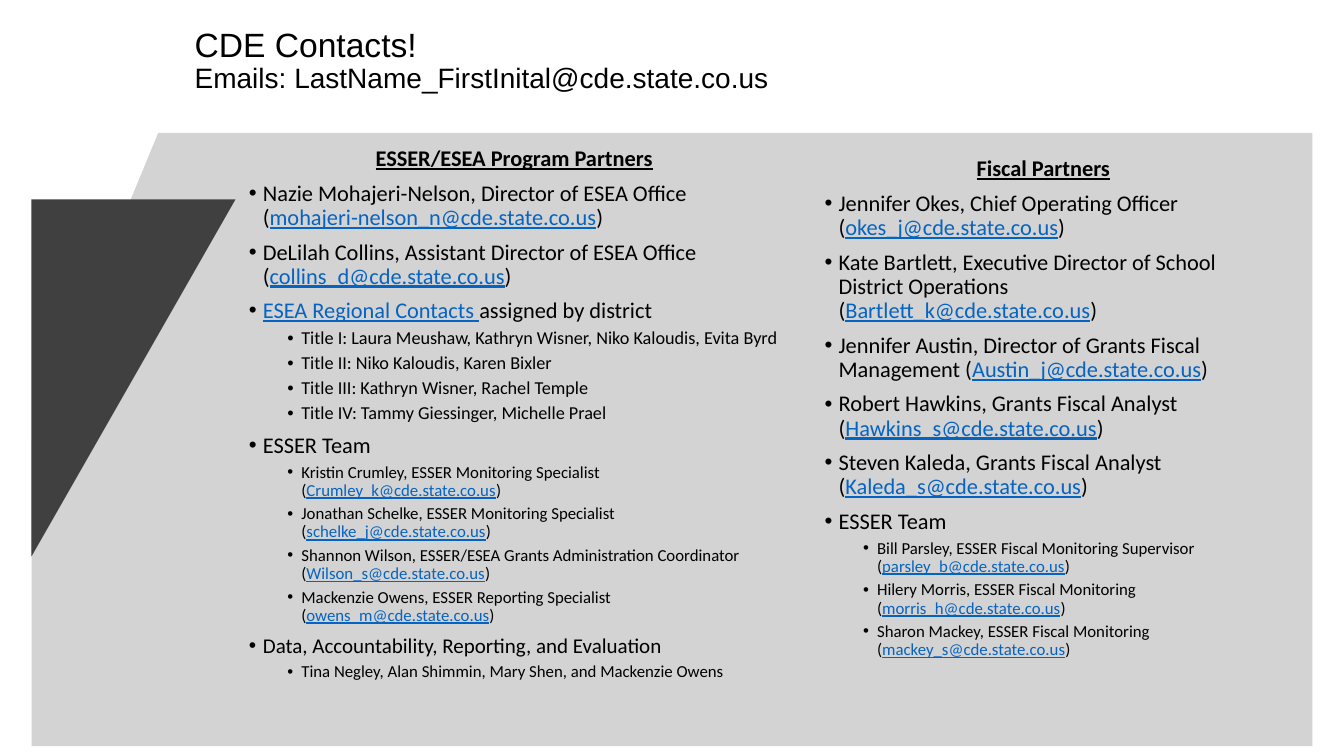
from pptx import Presentation
from pptx.util import Pt
from pptx.dml.color import RGBColor
from pptx.enum.text import PP_ALIGN as Align, MSO_ANCHOR as Anchor, MSO_AUTO_SIZE as Fit
from pptx.oxml.ns import qn
from lxml.etree import SubElement as Sub

# Content: text between bars is shown as a link
HEAD = [("CDE Contacts!", 24), ("Emails: LastName_FirstInital@cde.state.co.us", 20)]

# (level, size, text)
ESEA = [
    (0, 16, "Nazie Mohajeri-Nelson, Director of ESEA Office (|mohajeri-nelson_n@cde.state.co.us|)"),
    (0, 16, "DeLilah Collins, Assistant Director of ESEA Office (|collins_d@cde.state.co.us|)"),
    (0, 16, "|ESEA Regional Contacts |assigned by district"),
    (1, 13, "Title I: Laura Meushaw, Kathryn Wisner, Niko Kaloudis, Evita Byrd"),
    (1, 13, "Title II: Niko Kaloudis, Karen Bixler"),
    (1, 13, "Title III: Kathryn Wisner, Rachel Temple"),
    (1, 13, "Title IV: Tammy Giessinger, Michelle Prael"),
    (0, 16, "ESSER Team"),
    (1, 12, "Kristin Crumley, ESSER Monitoring Specialist (|Crumley_k@cde.state.co.us|)"),
    (1, 12, "Jonathan Schelke, ESSER Monitoring Specialist (|schelke_j@cde.state.co.us|)"),
    (1, 12, "Shannon Wilson, ESSER/ESEA Grants Administration Coordinator (|Wilson_s@cde.state.co.us|)"),
    (1, 12, "Mackenzie Owens, ESSER Reporting Specialist (|owens_m@cde.state.co.us|)"),
    (0, 15, "Data, Accountability, Reporting, and Evaluation"),
    (1, 12, "Tina Negley, Alan Shimmin, Mary Shen, and Mackenzie Owens"),
]
FISCAL = [
    (0, 16, "Jennifer Okes, Chief Operating Officer (|okes_j@cde.state.co.us|)"),
    (0, 16, "Kate Bartlett, Executive Director of School District Operations (|Bartlett_k@cde.state.co.us|)"),
    (0, 16, "Jennifer Austin, Director of Grants Fiscal Management (|Austin_j@cde.state.co.us|)"),
    (0, 16, "Robert Hawkins, Grants Fiscal Analyst (|Hawkins_s@cde.state.co.us|)"),
    (0, 16, "Steven Kaleda, Grants Fiscal Analyst (|Kaleda_s@cde.state.co.us|)"),
    (0, 16, "ESSER Team"),
    (1, 12, "Bill Parsley, ESSER Fiscal Monitoring Supervisor (|parsley_b@cde.state.co.us|)"),
    (1, 12, "Hilery Morris, ESSER Fiscal Monitoring (|morris_h@cde.state.co.us|)"),
    (1, 12, "Sharon Mackey, ESSER Fiscal Monitoring (|mackey_s@cde.state.co.us|)"),
]
# (placeholder index, box, heading, lines)
LISTS = [
    (1, (177.8, 105.1, 379, 384.5), "ESSER/ESEA Program Partners", ESEA),
    (2, (589, 112.3, 312.5, 384.5), "Fiscal Partners", FISCAL),
]
# (points, fill, opacity in percent)
PANELS = [
    ([(113, 95), (937.5, 95), (937.5, 533), (22.5, 533), (22.5, 315), (87, 158)], "A6A6A6", 49),
    ([(22.5, 142.5), (168.2, 142.5), (22.5, 397.5)], "404040", 100),
]
BLACK, LINK = "000000", "0563C1"
INDENT = (10, 37.5)
GAP = (7.5, 3.8)


def hue(code):
    return RGBColor.from_string(code)


def setup(shape, box, foot=0):
    """Place a text shape and return its frame."""
    for key, val in zip(("left", "top", "width", "height"), box):
        setattr(shape, key, Pt(val))
    frame = shape.text_frame
    form = dict(margin_left=0, margin_top=0, margin_right=0, margin_bottom=Pt(foot),
                word_wrap=True, auto_size=Fit.NONE, vertical_anchor=Anchor.TOP)
    for key, val in form.items():
        setattr(frame, key, val)
    return frame


def add_para(frame, first, **form):
    para = frame.paragraphs[0] if first else frame.add_paragraph()
    form = dict(line_spacing=0.9, space_before=Pt(0), space_after=Pt(0)) | form
    for key, val in form.items():
        setattr(para, key, val)
    return para


def add_run(para, text, size, face="Calibri", color=BLACK, **form):
    run = para.add_run()
    run.text = text
    for key, val in (dict(size=Pt(size), name=face, bold=False) | form).items():
        setattr(run.font, key, val)
    run.font.color.rgb = hue(color)


def indent(para, left, hang):
    props = para._p.get_or_add_pPr()
    props.set("marL", str(Pt(left)))
    props.set("indent", str(-Pt(hang)))
    return props


def bullet(para, level):
    props = indent(para, INDENT[level], INDENT[0])
    Sub(Sub(props, qn("a:buClr")), qn("a:srgbClr"), val=BLACK)
    Sub(props, qn("a:buFont"), typeface="Arial")
    Sub(props, qn("a:buChar"), char="•")


deck = Presentation()
deck.slide_width, deck.slide_height = Pt(960), Pt(540)
slide = deck.slides.add_slide(deck.slide_layouts[3])

# Background panels, set behind the text
for rank, (points, color, alpha) in enumerate(PANELS):
    pen = slide.shapes.build_freeform(Pt(points[0][0]), Pt(points[0][1]))
    pen.add_line_segments([(Pt(x), Pt(y)) for x, y in points[1:]], close=True)
    panel = pen.convert_to_shape()
    panel.shadow.inherit = False
    panel.fill.solid()
    panel.fill.fore_color.rgb = hue(color)
    panel.line.fill.background()
    if alpha < 100:
        tone = panel.fill._xPr.find(".//" + qn("a:srgbClr"))
        Sub(tone, qn("a:alpha"), val=str(alpha * 1000))
    slide.shapes._spTree.insert(2 + rank, panel._element)

# Title
frame = setup(slide.shapes.title, (139, 20, 479, 60))
for row, (text, size) in enumerate(HEAD):
    para = add_para(frame, row == 0, alignment=Align.LEFT)
    add_run(para, text, size, "Arial")

# Contact lists
for idx, box, head, lines in LISTS:
    frame = setup(slide.placeholders[idx], box, 2)
    para = add_para(frame, True, alignment=Align.CENTER)
    Sub(indent(para, 0, 0), qn("a:buNone"))
    add_run(para, head, 16, bold=True, underline=True)
    for level, size, text in lines:
        para = add_para(frame, False, level=level, space_before=Pt(GAP[level]))
        bullet(para, level)
        for part, piece in enumerate(text.split("|")):
            if piece:
                link = part % 2 == 1
                add_run(para, piece, size, color=LINK if link else BLACK, underline=link)

deck.save("out.pptx")
